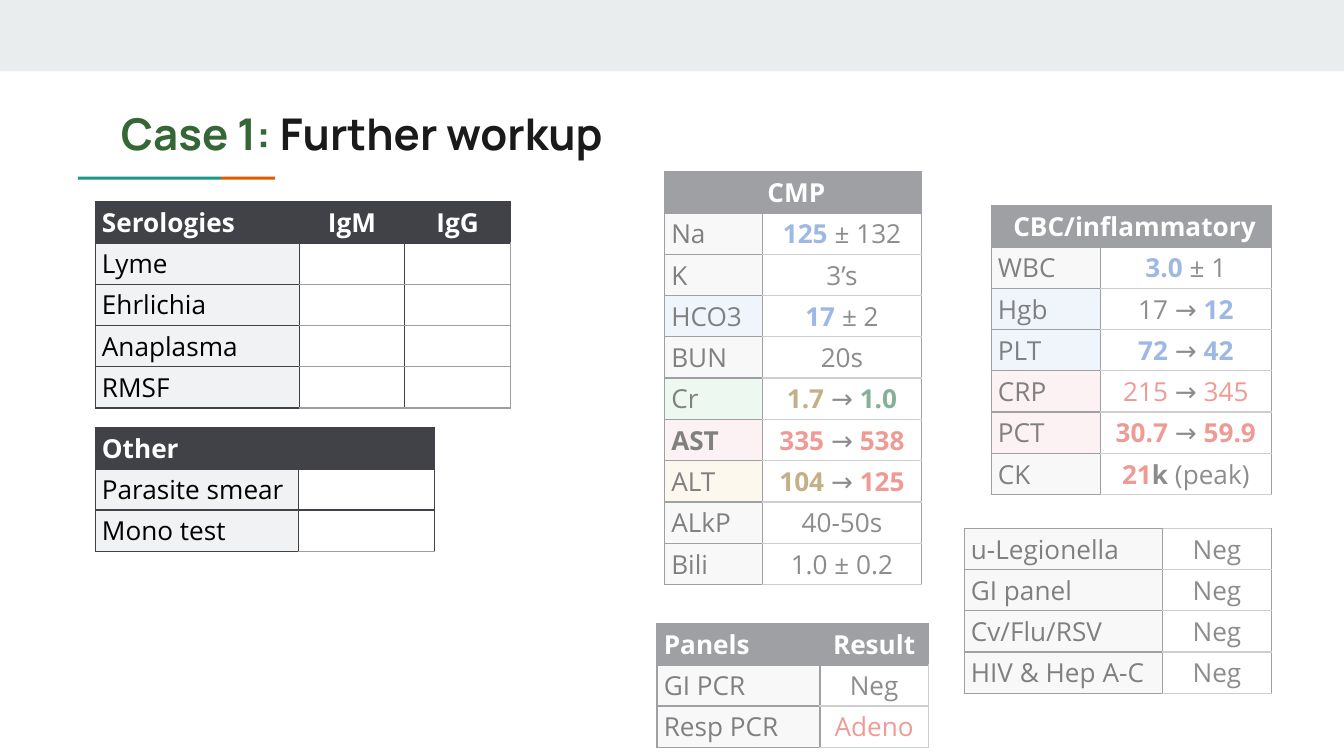
from pptx import Presentation
from pptx.dml.color import RGBColor
from pptx.enum.shapes import MSO_SHAPE
from pptx.enum.text import MSO_ANCHOR, MSO_AUTO_SIZE, PP_ALIGN
from pptx.oxml.ns import qn
from pptx.util import Pt
from lxml import etree

RECT = MSO_SHAPE.RECTANGLE
MID = MSO_ANCHOR.MIDDLE
LEFT, MIDDLE = PP_ALIGN.LEFT, PP_ALIGN.CENTER
FIXED = MSO_AUTO_SIZE.NONE


class Theme:
    # Colours
    white, band = "FFFFFF", "E9EDEE"
    teal, orange = "1A9988", "EB5600"
    dark, grey = "404247", "9E9E9E"
    plain, blue, pink, mint, sand = "F1F2F3", "E2EAF7", "FAE4E8", "DCF1E4", "FBF1DD"
    # Type
    head_font, body_font = "Manrope", "Open Sans"
    head_size, body_size = 23.4, 14
    # Run styles: colour, bold
    case, topic = ("356635", True), ("1A1A1A", True)
    head = ("FFFFFF", True)
    name, loud = ("000000", False), ("000000", True)
    text, strong = ("1A1A1A", False), ("1A1A1A", True)
    low, high, rise = ("3B71CA", True), ("DF382C", True), ("DF382C", False)
    warn, good = ("896110", True), ("0C622E", True)
    # Table measures
    row, pad, thin, thick = 22.12, 3.6, 0.75, 1.5


class Deck:
    def __init__(self, theme):
        self.theme = theme
        self.prs = Presentation()
        self.prs.slide_width, self.prs.slide_height = Pt(720), Pt(405)
        self.slide = self.prs.slides.add_slide(self.prs.slide_layouts[5])

    def runs(self, para, parts, font, size):
        for text, (color, bold) in parts:
            run = para.add_run()
            run.text = text
            run.font.name, run.font.size, run.font.bold = font, Pt(size), bold
            run.font.color.rgb = RGBColor.from_string(color)

    def title(self, box, parts):
        shape = self.slide.shapes.title
        shape.left, shape.top, shape.width, shape.height = map(Pt, box)
        frame = shape.text_frame
        frame.auto_size, frame.vertical_anchor = FIXED, MID
        frame.margin_left = frame.margin_right = Pt(7.2)
        frame.margin_top = frame.margin_bottom = Pt(7.2)
        para = frame.paragraphs[0]
        para.alignment = LEFT
        self.runs(para, parts, self.theme.head_font, self.theme.head_size)

    def rect(self, box, color, alpha=100):
        shape = self.slide.shapes.add_shape(RECT, *map(Pt, box))
        shape.shadow.inherit = False
        shape.fill.solid()
        shape.fill.fore_color.rgb = RGBColor.from_string(color)
        shape.line.fill.background()
        if alpha < 100:
            tint = shape.fill._xPr.find(".//" + qn("a:srgbClr"))
            etree.SubElement(tint, qn("a:alpha")).set("val", str(alpha * 1000))

    def border(self, cell, sides):
        props = cell._tc.get_or_add_tcPr()
        for side, (color, width) in zip("LRTB", sides):
            line = etree.SubElement(props, qn("a:ln" + side), w=str(Pt(width)))
            fill = etree.SubElement(line, qn("a:solidFill"))
            etree.SubElement(fill, qn("a:srgbClr"), val=color)

    def cell(self, cell, parts, fill, sides, align, pad):
        t = self.theme
        self.border(cell, sides)
        if fill:
            cell.fill.solid()
            cell.fill.fore_color.rgb = RGBColor.from_string(fill)
        else:
            cell.fill.background()
        cell.vertical_anchor = MID
        cell.margin_left = Pt(pad)
        cell.margin_right = cell.margin_top = cell.margin_bottom = Pt(0)
        para = cell.text_frame.paragraphs[0]
        para.alignment = align
        self.runs(para, parts, t.body_font, t.body_size)
        if not parts:
            end = etree.SubElement(para._p, qn("a:endParaRPr"))
            end.set("sz", str(t.body_size * 100))

    def table(self, spot, widths, heads, rows, edge, rule=Theme.grey):
        """Rows are (name, fill, value, ...); edge colours the right side."""
        t = self.theme
        first = 1 if heads else 0
        count, cols = len(rows) + first, len(widths)
        frame = self.slide.shapes.add_table(
            count, cols, *map(Pt, spot), Pt(sum(widths)), Pt(t.row * count))
        grid = frame.table
        grid.first_row = grid.horz_banding = False
        for col, width in zip(grid.columns, widths):
            col.width = Pt(width)
        for row in grid.rows:
            row.height = Pt(t.row)
        dark, bold = (t.dark, t.thin), (t.dark, t.thick)

        # Header row; a single header covers all columns
        if heads:
            lone = len(heads) == 1
            for c in range(cols):
                label = heads[c] if c < len(heads) else ""
                self.cell(grid.cell(0, c), [(label, t.head)] if label else [],
                          t.dark, (dark, dark, dark, bold),
                          MIDDLE if c or lone else LEFT, 0 if c else t.pad)
            if lone:
                grid.cell(0, 0).merge(grid.cell(0, cols - 1))

        # Body rows
        for r, (name, fill, *values) in enumerate(rows, first):
            under = heads and r == first
            top = bold if under else dark
            label = [(name, t.name)] if isinstance(name, str) else [name]
            self.cell(grid.cell(r, 0), label, fill,
                      (dark, dark, top, dark), LEFT, t.pad)
            for c, parts in enumerate(values, 1):
                right = (edge, t.thin) if c == cols - 1 else dark
                over = bold if under else (rule, t.thin)
                base = (t.grey if r == count - 1 else rule, t.thin)
                self.cell(grid.cell(r, c), parts, None,
                          (dark, right, over, base), MIDDLE, 0)


def change(old, new, before, after):
    """Two values joined by an arrow."""
    return [(old + " ", before), ("→ ", Theme.text), (new, after)]


def main():
    t = Theme
    deck = Deck(t)
    neg = [("Neg", t.text)]

    # Top band, title and accent line
    deck.rect((0, 0, 720, 38.2), t.band)
    deck.title((57.6, 49.8, 605.5, 42.5),
               [("Case 1:", t.case), (" Further workup", t.topic)])
    deck.rect((41.8, 94.7, 76.6, 1.6), t.teal)
    deck.rect((118.4, 94.7, 29, 1.6), t.orange)

    # Serologies, still to be filled in
    deck.table((51, 108), (109.3, 56.6, 56.6), ("Serologies", "IgM", "IgG"),
               [(name, t.plain, [], [])
                for name in ("Lyme", "Ehrlichia", "Anaplasma", "RMSF")], t.grey)

    # Earlier results
    deck.table((352, 334), (87.3, 58.1), ("Panels", "Result"), [
        ("GI PCR", t.plain, neg),
        ("Resp PCR", t.plain, [("Adeno", t.rise)]),
    ], t.grey)
    deck.table((531, 110.2), (58.5, 91.6), ("CBC/inflammatory",), [
        ("WBC", t.plain, [("3.0 ", t.low), ("± 1", t.text)]),
        ("Hgb", t.blue, change("17", "12", t.text, t.low)),
        ("PLT", t.blue, change("72", "42", t.low, t.low)),
        ("CRP", t.pink, change("215", "345", t.rise, t.rise)),
        ("PCT", t.pink, change("30.7", "59.9", t.high, t.high)),
        ("CK", t.plain, [("21", t.high), ("k", t.strong), (" (peak)", t.text)]),
    ], t.dark)
    deck.table((356, 92), (52.5, 85.2), ("CMP",), [
        ("Na", t.plain, [("125 ", t.low), ("± 132", t.text)]),
        ("K", t.plain, [("3’s", t.text)]),
        ("HCO3", t.blue, [("17 ", t.low), ("± 2", t.text)]),
        ("BUN", t.plain, [("20s", t.text)]),
        ("Cr", t.mint, change("1.7", "1.0", t.warn, t.good)),
        (("AST", t.loud), t.pink, change("335", "538", t.high, t.high)),
        ("ALT", t.sand, change("104", "125", t.warn, t.high)),
        ("ALkP", t.plain, [("40-50s", t.text)]),
        ("Bili", t.plain, [("1.0 ± 0.2", t.text)]),
    ], t.dark)
    deck.table((516.5, 283), (106.3, 58.3), (),
               [(name, t.plain, neg) for name in
                ("u-Legionella", "GI panel", "Cv/Flu/RSV", "HIV & Hep A-C")], t.dark)

    # Veil that fades the earlier results
    deck.rect((346.3, 87.1, 341.3, 317.6), t.white, 50)

    # Other tests, still to be filled in
    deck.table((51, 229), (109, 72.6), ("Other", ""),
               [(name, t.plain, []) for name in ("Parasite smear", "Mono test")],
               t.dark, t.dark)

    deck.prs.save("out.pptx")


if __name__ == "__main__":
    main()
